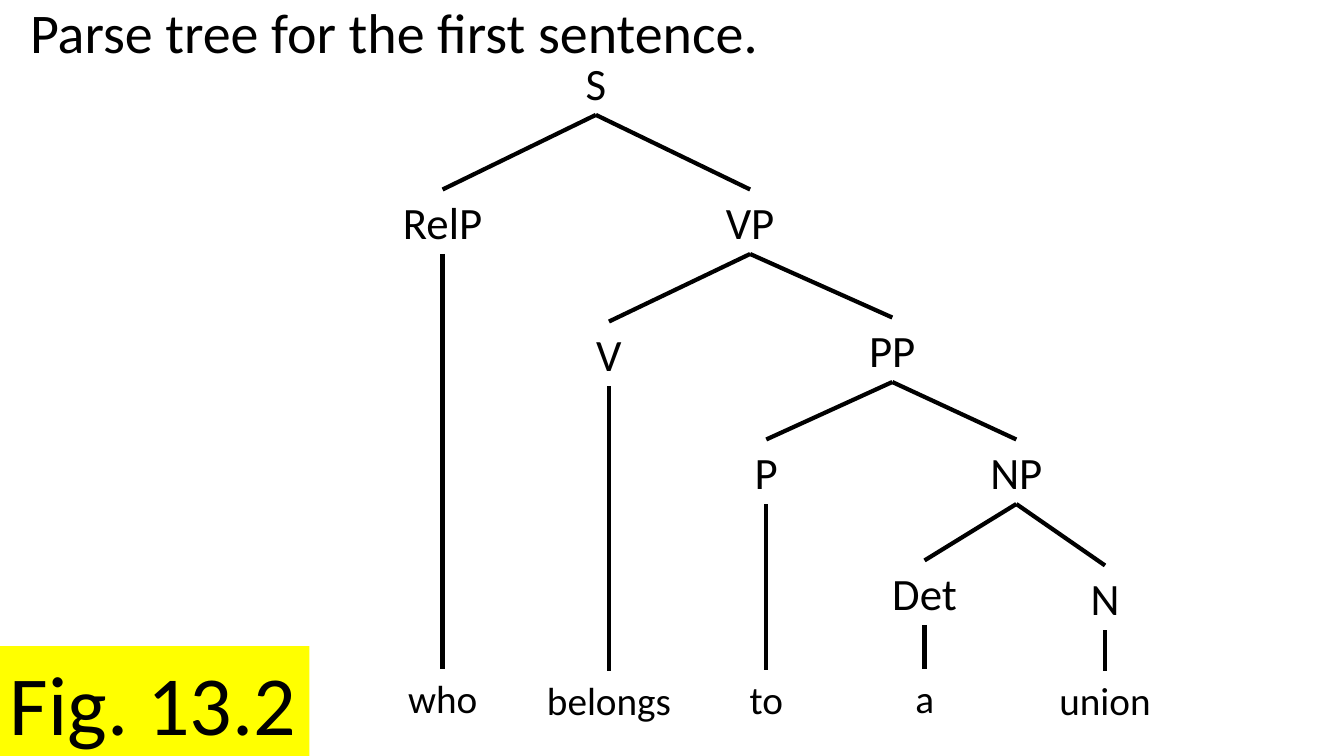
"""Build the parse tree slide for the first sentence."""
import pptx
import pptx.dml.color
import pptx.enum.shapes
import pptx.enum.text
import pptx.oxml.ns
import pptx.util
from lxml import etree

Inches = pptx.util.Inches
Align = pptx.enum.text.PP_ALIGN


def rgb(value):
    return pptx.dml.color.RGBColor.from_string(value)


def add_text(sp, text, size, align=Align.CENTER, wrap=False):
    tf = sp.text_frame
    tf.word_wrap = wrap
    tf.vertical_anchor = pptx.enum.text.MSO_ANCHOR.TOP
    p = tf.paragraphs[0]
    p.alignment = align
    r = p.add_run()
    r.text = text
    r.font.size = pptx.util.Pt(size)
    r.font.name = "Calibri"
    r.font.color.rgb = rgb("000000")
    return p


prs = pptx.Presentation()
prs.slide_width = Inches(13.33)
prs.slide_height = Inches(7.5)
s = prs.slides.add_slide(prs.slide_layouts[6])

label = s.shapes.add_shape(pptx.enum.shapes.MSO_SHAPE.RECTANGLE,
                           Inches(0), Inches(6.41), Inches(3.07), Inches(1.11))
label.shadow.inherit = False
label.fill.solid()
label.fill.fore_color.rgb = rgb("FFFF00")
label.line.fill.background()
add_text(label, "Fig. 13.2", 60, Align.LEFT)

title = s.shapes.add_textbox(Inches(0.2), Inches(0), Inches(12.96), Inches(1.9))
p = add_text(title, "Parse tree for the first sentence.", 40, Align.LEFT, True)
p.line_spacing = 0.9

# name: (centre x, top, width, parent)
phrases = {
    "S": (5.91, 0.5, 0.41, None),
    "RelP": (4.39, 1.88, 1, "S"),
    "VP": (7.44, 1.88, 0.69, "S"),
    "V": (6.04, 3.19, 0.46, "VP"),
    "PP": (8.85, 3.15, 0.66, "VP"),
    "P": (7.6, 4.36, 0.43, "PP"),
    "NP": (10.08, 4.36, 0.72, "PP"),
    "Det": (9.17, 5.56, 0.85, "NP"),
    "N": (10.96, 5.61, 0.49, "NP"),
}
words = {
    "who": (4.39, 6.64, 0.9, "RelP"),
    "belongs": (6.04, 6.66, 1.44, "V"),
    "to": (7.6, 6.65, 0.54, "P"),
    "a": (9.17, 6.64, 0.39, "Det"),
    "union": (10.96, 6.66, 1.12, "N"),
}
phrase_height = 0.64

for nodes, size, height in ((phrases, 32, phrase_height), (words, 28, 0.57)):
    for name, (x, top, width, parent) in nodes.items():
        sp = s.shapes.add_textbox(Inches(x - width / 2), Inches(top),
                                  Inches(width), Inches(height))
        add_text(sp, name, size)
        if parent is None:
            continue
        parent_x, parent_top = phrases[parent][:2]
        branch = s.shapes.add_connector(
            pptx.enum.shapes.MSO_CONNECTOR.STRAIGHT,
            Inches(parent_x), Inches(parent_top + phrase_height),
            Inches(x), Inches(top))
        branch.line.width = pptx.util.Pt(3)
        branch.line.color.rgb = rgb("000000")
        etree.SubElement(branch._element.spPr, pptx.oxml.ns.qn("a:effectLst"))

prs.save("out.pptx")
